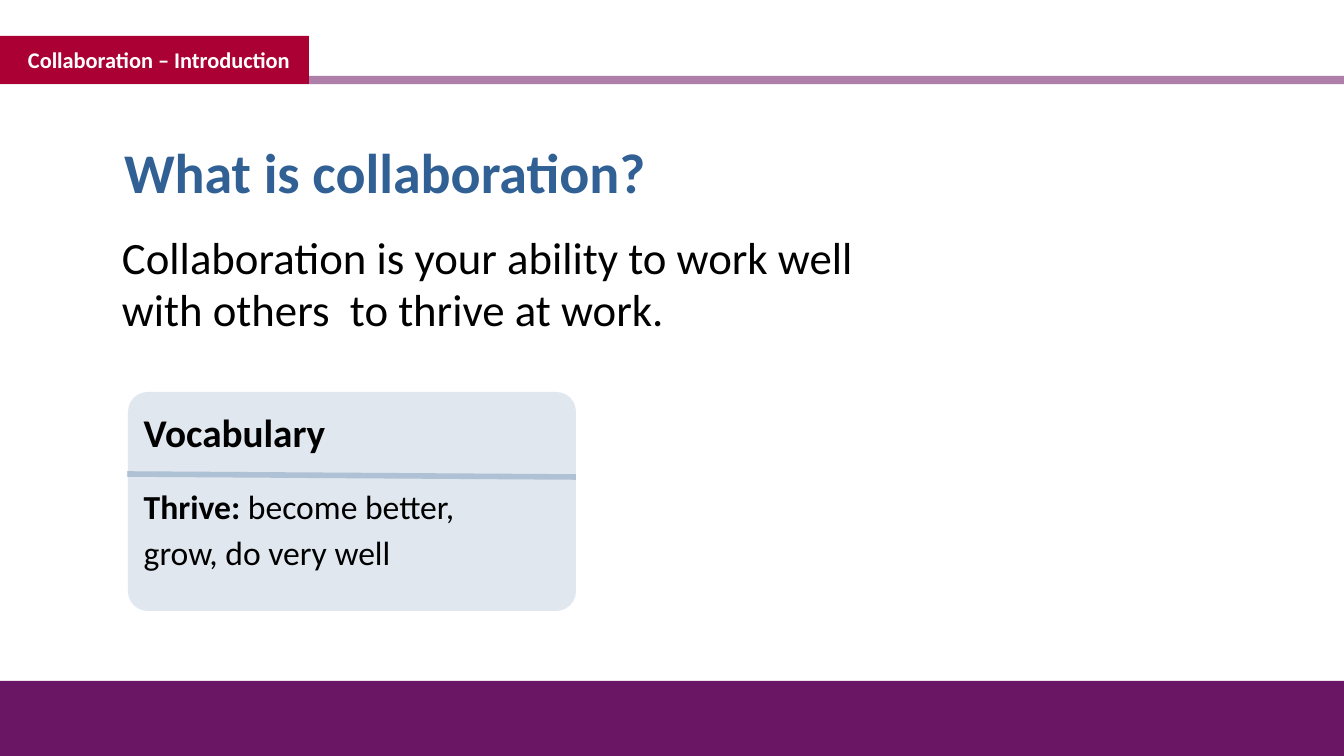
from dataclasses import dataclass

from pptx import Presentation
from pptx.dml.color import RGBColor
from pptx.enum.shapes import MSO_CONNECTOR, MSO_SHAPE
from pptx.enum.text import MSO_ANCHOR, MSO_AUTO_SIZE, PP_ALIGN
from pptx.oxml.ns import qn
from pptx.util import Pt
from lxml import etree

EMU_PER_INCH = 914400
PX_PER_INCH = 100.8
FONT = "Calibri"
WHITE = RGBColor(0xFF, 0xFF, 0xFF)
BLACK = RGBColor(0, 0, 0)
BLUE = RGBColor(0x31, 0x60, 0x94)
PURPLE = RGBColor(0x6B, 0x16, 0x64)
CRIMSON = RGBColor(0xAB, 0x00, 0x33)
RECTANGLE = MSO_SHAPE.RECTANGLE
ROUNDED = MSO_SHAPE.ROUNDED_RECTANGLE
STRAIGHT = MSO_CONNECTOR.STRAIGHT
TOP, MIDDLE = MSO_ANCHOR.TOP, MSO_ANCHOR.MIDDLE
LEFT = PP_ALIGN.LEFT
NO_AUTOFIT = MSO_AUTO_SIZE.NONE
TITLE_ONLY = 5


@dataclass
class Box:
    left: int
    top: int
    width: int
    height: int


@dataclass
class Panel:
    box: Box
    color: RGBColor
    kind: int = RECTANGLE
    opacity: int = 100


@dataclass
class Rule:
    start: tuple[int, int]
    end: tuple[int, int]
    color: RGBColor
    weight: int
    opacity: int


@dataclass
class Phrase:
    text: str
    size: int
    color: RGBColor = BLACK
    bold: bool = False


@dataclass
class TextLine:
    phrases: list[Phrase]
    spacing: float = 1.0
    before: int = 0
    after: int = 0


FOOTER = Panel(Box(0, 681, 1344, 75), PURPLE)
TAG = Panel(Box(0, 36, 309, 48), CRIMSON)
CARD = Panel(Box(128, 392, 448, 219), BLUE, ROUNDED, 15)
HEADER_RULE = Rule((0, 80), (1344, 80), PURPLE, 6, 55)
CARD_RULE = Rule((576, 477), (127, 474), BLUE, 4, 27)
TITLE_BOX = Box(114, 133, 1142, 78)
BODY_BOX = Box(112, 228, 777, 336)

TITLE = [TextLine([Phrase("What is collaboration?", 40, BLUE, True)])]
BODY = [TextLine([Phrase(
    "Collaboration is your ability to work well with others  to thrive at work.", 32)], 0.97)]
TAG_TEXT = [TextLine([Phrase("Collaboration – Introduction", 16, WHITE, True)])]
VOCABULARY = [
    TextLine([Phrase("Vocabulary", 28, bold=True)], 1.15, 6, 18),
    TextLine([Phrase("Thrive: ", 24, bold=True),
              Phrase("become better, \ngrow, do very well", 24)], 1.13),
]


def px(length: int) -> int:
    return round(length * EMU_PER_INCH / PX_PER_INCH)


def corners(box: Box) -> list[int]:
    return [px(value) for value in (box.left, box.top, box.width, box.height)]


def set_opacity(properties, percent: int) -> None:
    color = next(properties.iter(qn("a:srgbClr")))
    etree.SubElement(color, qn("a:alpha")).set("val", str(percent * 1000))


def add_panel(slide, panel: Panel):
    shape = slide.shapes.add_shape(panel.kind, *corners(panel.box))
    shape.shadow.inherit = False
    shape.fill.solid()
    shape.fill.fore_color.rgb = panel.color
    shape.line.fill.background()
    if panel.opacity < 100:
        set_opacity(shape.element.spPr, panel.opacity)
    return shape


def add_rule(slide, rule: Rule) -> None:
    ends = [px(value) for value in rule.start + rule.end]
    connector = slide.shapes.add_connector(STRAIGHT, *ends)
    connector.line.color.rgb = rule.color
    connector.line.width = Pt(rule.weight)
    properties = connector.element.spPr
    set_opacity(properties, rule.opacity)
    etree.SubElement(properties, qn("a:effectLst"))


def write(shape, lines: list[TextLine], anchor=TOP, side: int = 10, edge: int = 5) -> None:
    """Fill a shape with text; side is its left margin, edge its top and bottom ones."""
    frame = shape.text_frame
    frame.word_wrap = True
    frame.auto_size = NO_AUTOFIT
    frame.vertical_anchor = anchor
    frame.margin_left = px(side)
    frame.margin_right = px(10)
    frame.margin_top = frame.margin_bottom = px(edge)
    for index, line in enumerate(lines):
        para = frame.add_paragraph() if index else frame.paragraphs[0]
        para.alignment = LEFT
        para.line_spacing = line.spacing
        para.space_before = Pt(line.before)
        para.space_after = Pt(line.after)
        for phrase in line.phrases:
            for row, text in enumerate(phrase.text.split("\n")):
                if row:
                    para.add_line_break()
                span = para.add_run()
                span.text = text
                span.font.name = FONT
                span.font.size = Pt(phrase.size)
                span.font.bold = phrase.bold
                span.font.color.rgb = phrase.color


def main() -> None:
    deck = Presentation()
    deck.slide_width, deck.slide_height = px(1344), px(756)
    slide = deck.slides.add_slide(deck.slide_layouts[TITLE_ONLY])

    body = slide.shapes.add_textbox(*corners(BODY_BOX))
    write(body, BODY)
    title = slide.shapes.title
    title.left, title.top, title.width, title.height = corners(TITLE_BOX)
    write(title, TITLE)

    add_panel(slide, FOOTER)
    add_rule(slide, HEADER_RULE)
    write(add_panel(slide, TAG), TAG_TEXT, MIDDLE, side=28)

    card = add_panel(slide, CARD)
    card.adjustments[0] = 0.09
    write(card, VOCABULARY, edge=4)
    add_rule(slide, CARD_RULE)

    deck.save("out.pptx")


if __name__ == "__main__":
    main()
